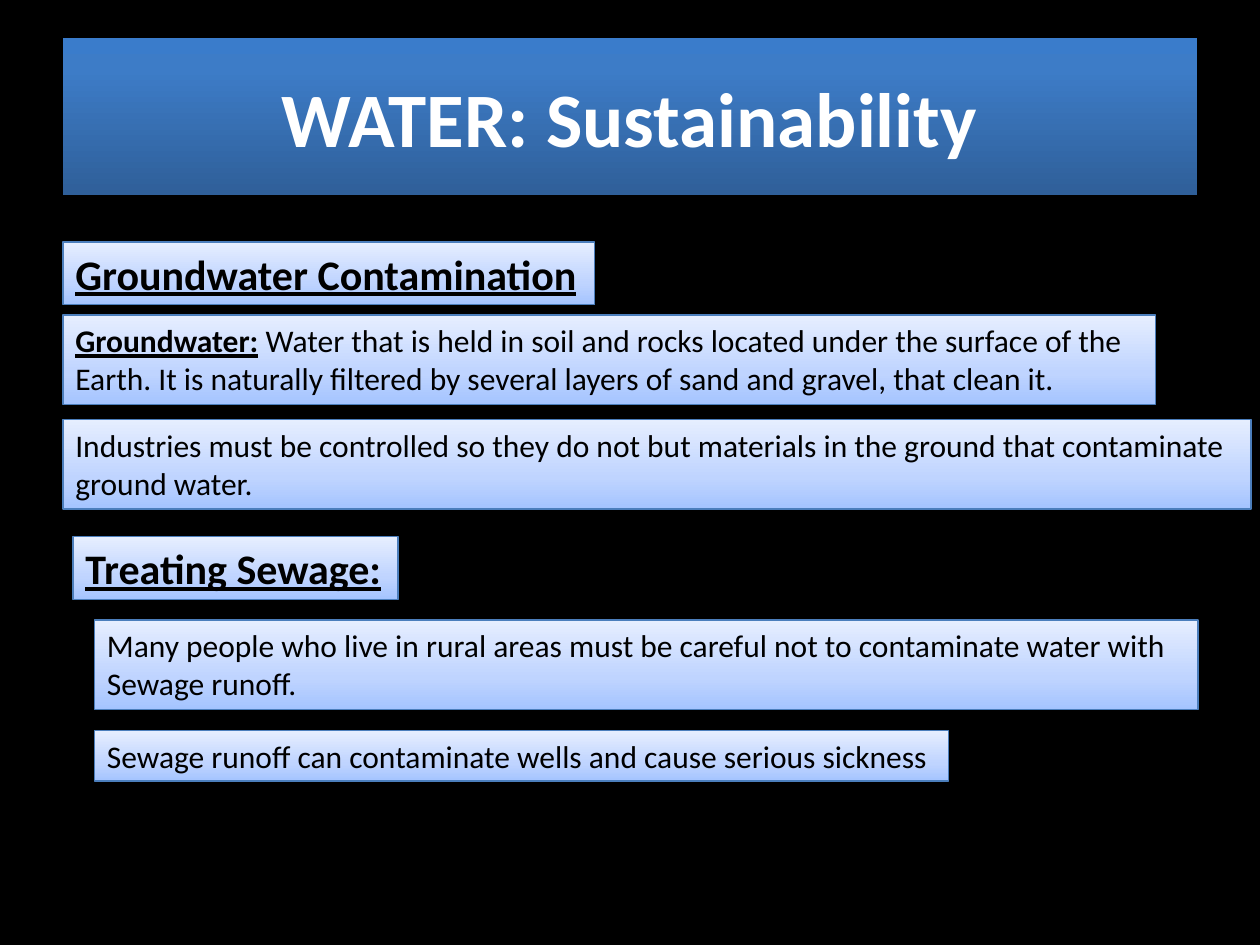
from copy import deepcopy

from pptx import Presentation
from pptx.dml.color import RGBColor as Color
from pptx.enum.text import MSO_ANCHOR as Anchor
from pptx.enum.text import MSO_AUTO_SIZE as Fit
from pptx.enum.text import PP_ALIGN as Align
from pptx.oxml.ns import qn
from pptx.util import Inches, Pt

HEX = {"back": "000000", "ink": "000000", "title": "FFFFFF", "edge": "4B7EBC"}
FADES = {
    "title": [(0, "2F5F99"), (0.8, "3D7CC7"), (1, "3A7CCB")],
    "note": [(0, "A4C4FF"), (0.35, "BFD4FF"), (1, "E6EEFF")],
}

# Font formats
BODY = {"name": "Calibri", "size": Pt(18), "bold": False}
TERM = {**BODY, "bold": True, "underline": True}
HEAD = {**TERM, "size": Pt(24)}
TITLE = {**BODY, "size": Pt(44), "bold": True}


def rgb(key):
    return Color.from_string(HEX[key])


def add_fade(box, stops):
    """Fill a box with a gradient that runs from bottom to top."""
    fill = box.fill
    fill.gradient()
    fill.gradient_angle = 90
    group = box._element.spPr.find(".//" + qn("a:gsLst"))
    while len(group) < len(stops):
        group.append(deepcopy(group[-1]))
    for stop, (pos, tone) in zip(fill.gradient_stops, stops):
        stop.position = pos
        stop.color.rgb = Color.from_string(tone)


def add_text(frame, lines, ink):
    """Write lines, each a list of (text, format) runs."""
    for num, runs in enumerate(lines):
        para = frame.add_paragraph() if num else frame.paragraphs[0]
        for text, form in runs:
            run = para.add_run()
            run.text = text
            run.font.color.rgb = rgb(ink)
            for name, value in form.items():
                setattr(run.font, name, value)


def add_box(slide, area, fade, lines, ink, **form):
    box = slide.shapes.add_textbox(*map(Inches, area))
    add_fade(box, FADES[fade])
    for name, value in form.items():
        setattr(box.text_frame, name, value)
    add_text(box.text_frame, lines, ink)
    return box


def add_title(slide, text):
    box = add_box(slide, (0.5, 0.3, 9, 1.25), "title", [[(text, TITLE)]], "title",
                  word_wrap=True, vertical_anchor=Anchor.MIDDLE)
    box.text_frame.paragraphs[0].alignment = Align.CENTER


def add_note(slide, area, lines, wrap=False):
    box = add_box(slide, area, "note", lines, "ink",
                  word_wrap=wrap, auto_size=Fit.SHAPE_TO_FIT_TEXT)
    box.line.color.rgb = rgb("edge")
    box.line.width = Pt(0.75)


def main():
    deck = Presentation()
    deck.slide_width, deck.slide_height = Inches(10), Inches(7.5)
    slide = deck.slides.add_slide(deck.slide_layouts[6])
    slide.background.fill.solid()
    slide.background.fill.fore_color.rgb = rgb("back")

    add_title(slide, "WATER: Sustainability")

    # Groundwater
    add_note(slide, (0.5, 1.92, 4.22, 0.5), [[("Groundwater Contamination", HEAD)]])
    add_note(slide, (0.5, 2.5, 8.67, 0.71), [[
        ("Groundwater:", TERM),
        (" ", {**BODY, "bold": True}),
        ("Water that is held in soil and rocks located under the surface of the "
         "Earth. It is naturally filtered by several layers of sand and gravel, "
         "that clean it.", BODY),
    ]], wrap=True)
    add_note(slide, (0.5, 3.33, 9.43, 0.71), [
        [("Industries must be controlled so they do not but materials in the "
          "ground that contaminate", BODY)],
        [("ground water.", BODY)],
    ])

    # Sewage
    add_note(slide, (0.58, 4.26, 2.58, 0.5), [[("Treating Sewage:", HEAD)]])
    add_note(slide, (0.75, 4.92, 8.76, 0.71), [
        [("Many people who live in rural areas must be careful not to "
          "contaminate water with", BODY)],
        [("Sewage runoff.", BODY)],
    ])
    add_note(slide, (0.75, 5.8, 6.78, 0.4), [
        [("Sewage runoff can contaminate wells and cause serious sickness", BODY)],
    ])

    deck.save("out.pptx")


if __name__ == "__main__":
    main()
